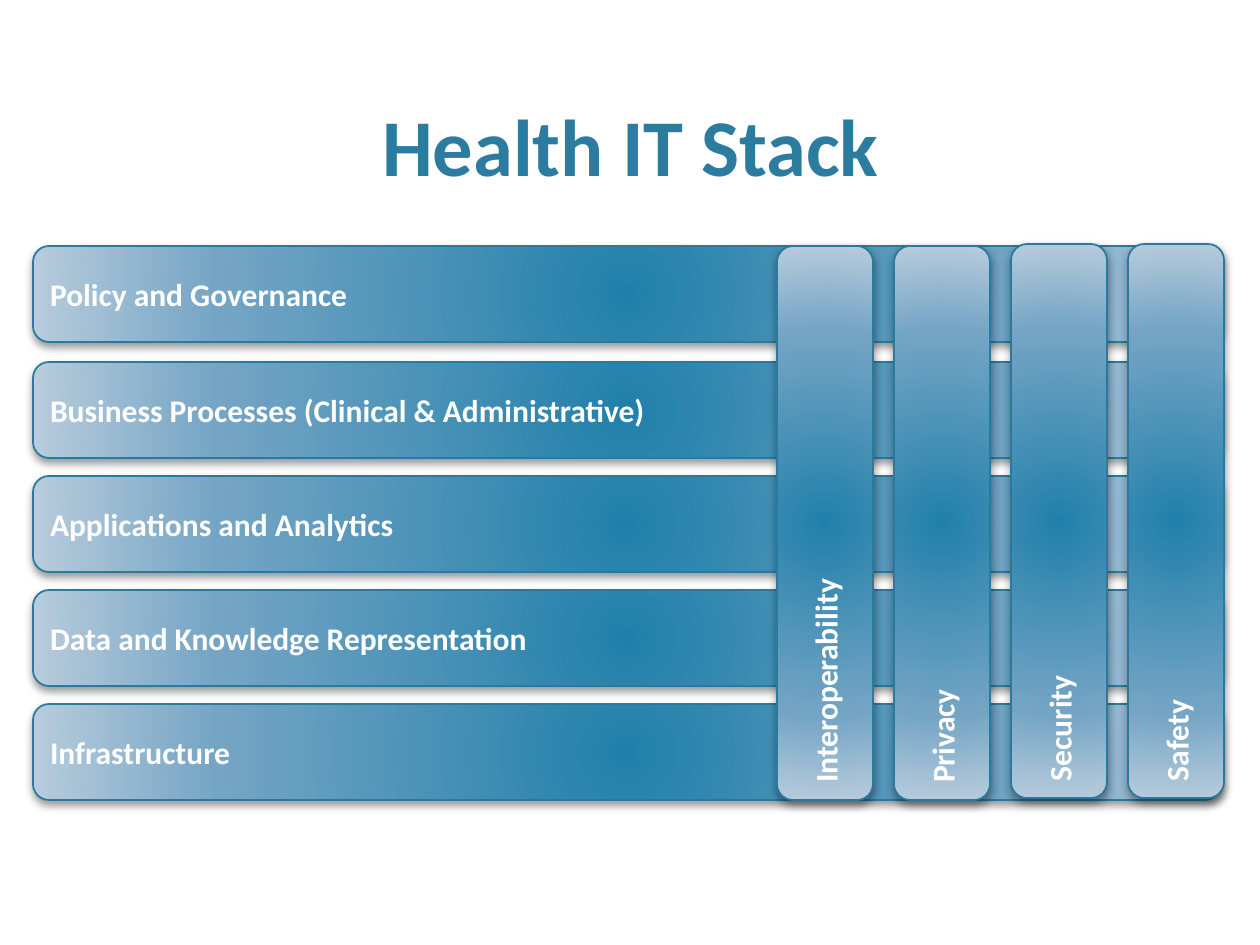
import pptx
import pptx.util
import pptx.dml.color
import pptx.enum.shapes
import pptx.enum.text
import pptx.oxml
import pptx.oxml.ns

RGB = pptx.dml.color.RGBColor
ALIGN = pptx.enum.text.PP_ALIGN
ANCHOR = pptx.enum.text.MSO_ANCHOR
TITLE = RGB(0x2C, 0x7C, 0x9F)
EDGE = RGB(0x28, 0x7A, 0x9E)
WHITE = RGB(0xFF, 0xFF, 0xFF)
DEEP = RGB(0x21, 0x80, 0xAA)
MID = RGB(0x75, 0xA5, 0xC5)
PALE = RGB(0xB8, 0xCC, 0xDC)
SCALE = 914400 / 126  # EMU in one px

NS = pptx.oxml.ns.nsdecls("a")
STOPS = "".join(
    f'<a:gs pos="{pos * 1000}"><a:srgbClr val="{tone}"/></a:gs>'
    for pos, tone in [(0, DEEP), (69, MID), (100, PALE)])
GLOW = (f'<a:gradFill {NS} rotWithShape="1"><a:gsLst>{STOPS}</a:gsLst>'
        '<a:path path="circle"><a:fillToRect l="100000" t="100000" '
        'r="100000" b="100000"/></a:path></a:gradFill>')
SHADE = (f'<a:effectLst {NS}><a:outerShdw blurRad="63500" dist="25400" '
         'dir="5400000" rotWithShape="0"><a:srgbClr val="000000">'
         '<a:alpha val="40000"/></a:srgbClr></a:outerShdw></a:effectLst>')


def write(shape, text, size=18, color=WHITE, align=ALIGN.LEFT,
          anchor=ANCHOR.MIDDLE):
    frame = shape.text_frame
    frame.word_wrap = True
    frame.auto_size = pptx.enum.text.MSO_AUTO_SIZE.NONE
    frame.vertical_anchor = anchor
    para = frame.paragraphs[0]
    para.alignment = align
    run = para.add_run()
    run.text = text
    run.font.name = "Calibri"
    run.font.size = pptx.util.Pt(size)
    run.font.bold = True
    run.font.color.rgb = color


def bar(text, x, y, w, h, turn=0):
    """Add a rounded bar with a radial gradient and a soft shadow."""
    shape = slide.shapes.add_shape(
        pptx.enum.shapes.MSO_SHAPE.ROUNDED_RECTANGLE,
        *(round(n * SCALE) for n in (x, y, w, h)))
    shape.rotation = turn
    shape.line.color.rgb = EDGE
    shape.line.width = pptx.util.Pt(1)
    props = shape._element.spPr
    props.find(pptx.oxml.ns.qn("a:ln")).addprevious(pptx.oxml.parse_xml(GLOW))
    props.append(pptx.oxml.parse_xml(SHADE))
    write(shape, text)


deck = pptx.Presentation()
deck.slide_width = pptx.util.Inches(10)
deck.slide_height = pptx.util.Inches(7.5)
slide = deck.slides.add_slide(deck.slide_layouts[5])

title = slide.shapes.title
title.left, title.top, title.width, title.height = (
    round(n * SCALE) for n in (76, 15, 1109, 184))
write(title, "Health IT Stack", size=46, color=TITLE, align=ALIGN.CENTER,
      anchor=ANCHOR.BOTTOM)

layers = [
    ("Infrastructure", 704),
    ("Data and Knowledge Representation", 590),
    ("Applications and Analytics", 476),
    ("Business Processes (Clinical & Administrative)", 362),
    ("Policy and Governance", 246),
]
for text, top in layers:
    bar(text, 33, top, 1188, 96)

# Pillars are laid flat and turned about their centre
pillars = [("Interoperability", 475), ("Privacy", 475),
           ("Security", 473), ("Safety", 473)]
for i, (text, top) in enumerate(pillars):
    bar(text, 548 + 117 * i, top, 554, 96, turn=270)

deck.save("out.pptx")
